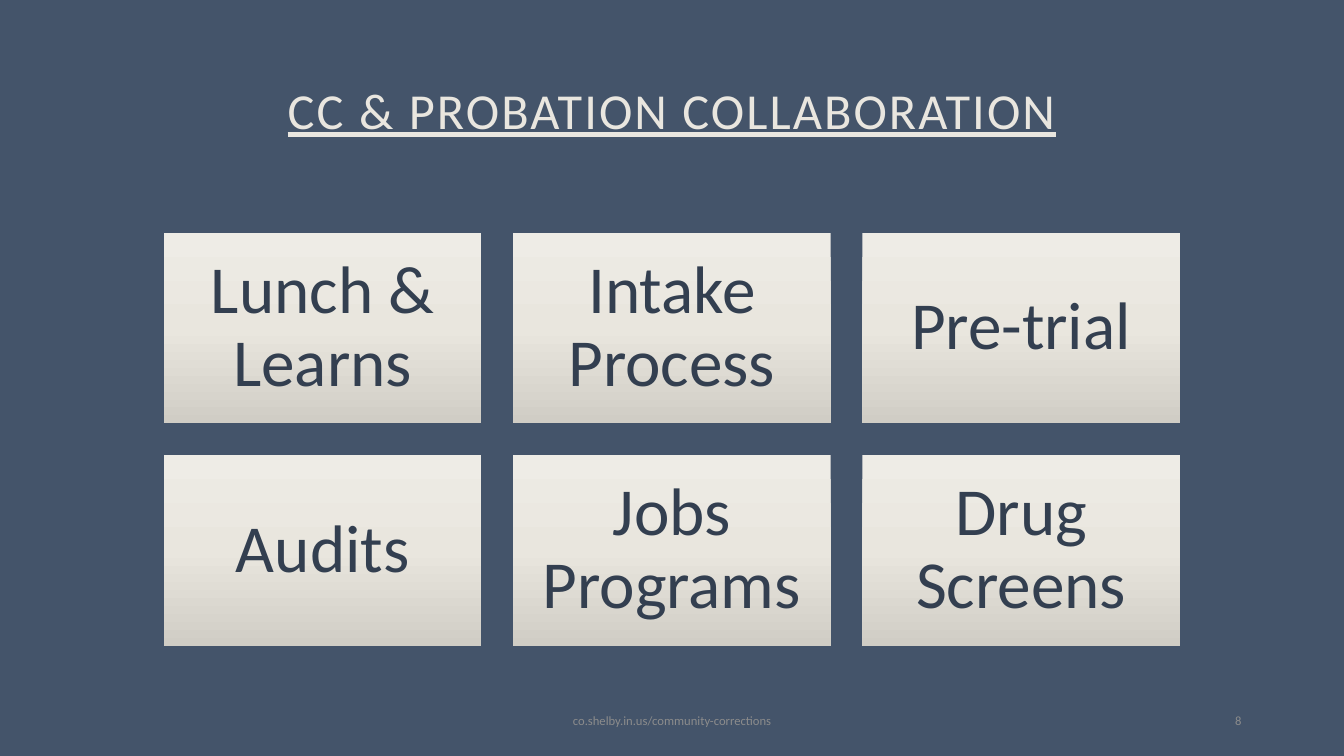
from copy import deepcopy

from pptx import Presentation
from pptx.dml.color import RGBColor
from pptx.enum.shapes import MSO_SHAPE
from pptx.enum.text import MSO_ANCHOR, PP_ALIGN
from pptx.oxml.ns import qn
from pptx.util import Cm, Pt

RECTANGLE = MSO_SHAPE.RECTANGLE
MIDDLE = MSO_ANCHOR.MIDDLE
CENTER, RIGHT = PP_ALIGN.CENTER, PP_ALIGN.RIGHT

TITLE = "CC & PROBATION COLLABORATION"
TOPICS = [
    "Lunch & Learns", "Intake Process", "Pre-trial",
    "Audits", "Jobs Programs", "Drug Screens",
]
FOOTERS = [
    ("co.shelby.in.us/community-corrections", 11.22, 11.43, CENTER),
    ("8", 23.92, 7.62, RIGHT),
]

THEME = {
    "font": "Calibri",
    "background": "44546A",
    "title": ("E9E6DF", 36),
    "card": ("333F50", 48),
    "footer": ("8C8C8C", 9),
    "gradient": [(0, "EEECE6"), (0.5, "E9E6DE"), (1, "D0CDC5")],
}

SLIDE_WIDTH, SLIDE_HEIGHT = 33.87, 19.05
COLUMNS = 3
CARD_WIDTH, CARD_HEIGHT, GAP = 8, 4.8, 0.8
GRID_LEFT = (SLIDE_WIDTH - COLUMNS * CARD_WIDTH - (COLUMNS - 1) * GAP) / 2
GRID_TOP = 5.87


def write_text(shape, text, style, alignment=CENTER, line_spacing=1.0, inset=0.25):
    frame = shape.text_frame
    frame.word_wrap = True
    frame.vertical_anchor = MIDDLE
    frame.margin_left = frame.margin_right = Cm(inset)
    frame.margin_top = frame.margin_bottom = Cm(inset / 2 if inset < 0.5 else inset)
    paragraph = frame.paragraphs[0]
    paragraph.alignment = alignment
    paragraph.line_spacing = line_spacing
    run = paragraph.add_run()
    run.text = text
    color, size = THEME[style]
    run.font.name = THEME["font"]
    run.font.size = Pt(size)
    run.font.color.rgb = RGBColor.from_string(color)
    return run


def add_text(slide, text, left, top, width, height, style, **layout):
    box = slide.shapes.add_textbox(Cm(left), Cm(top), Cm(width), Cm(height))
    return write_text(box, text, style, **layout)


def apply_gradient(shape):
    shape.fill.gradient()
    shape.fill.gradient_angle = 270
    stop_list = shape.element.spPr.find(qn("a:gradFill")).find(qn("a:gsLst"))
    stop_list.insert(1, deepcopy(stop_list[0]))
    for stop, (position, color) in zip(shape.fill.gradient_stops, THEME["gradient"]):
        stop.position = position
        stop.color.rgb = RGBColor.from_string(color)


def add_card(slide, index, topic):
    row, column = divmod(index, COLUMNS)
    left = GRID_LEFT + column * (CARD_WIDTH + GAP)
    top = GRID_TOP + row * (CARD_HEIGHT + GAP)
    card = slide.shapes.add_shape(
        RECTANGLE, Cm(left), Cm(top), Cm(CARD_WIDTH), Cm(CARD_HEIGHT)
    )
    card.shadow.inherit = False
    card.line.fill.background()
    apply_gradient(card)
    write_text(card, topic, "card", line_spacing=0.9, inset=0.51)


def main():
    presentation = Presentation()
    presentation.slide_width = Cm(SLIDE_WIDTH)
    presentation.slide_height = Cm(SLIDE_HEIGHT)
    slide = presentation.slides.add_slide(presentation.slide_layouts[6])
    slide.background.fill.solid()
    slide.background.fill.fore_color.rgb = RGBColor.from_string(THEME["background"])

    title = add_text(slide, TITLE, 2.33, 1.01, 29.21, 3.68, "title", line_spacing=0.9)
    title.font.underline = True
    title.font._element.set("spc", "150")

    for index, topic in enumerate(TOPICS):
        add_card(slide, index, topic)

    for text, left, width, alignment in FOOTERS:
        add_text(slide, text, left, 17.66, width, 1.01, "footer", alignment=alignment)

    presentation.save("out.pptx")


if __name__ == "__main__":
    main()
